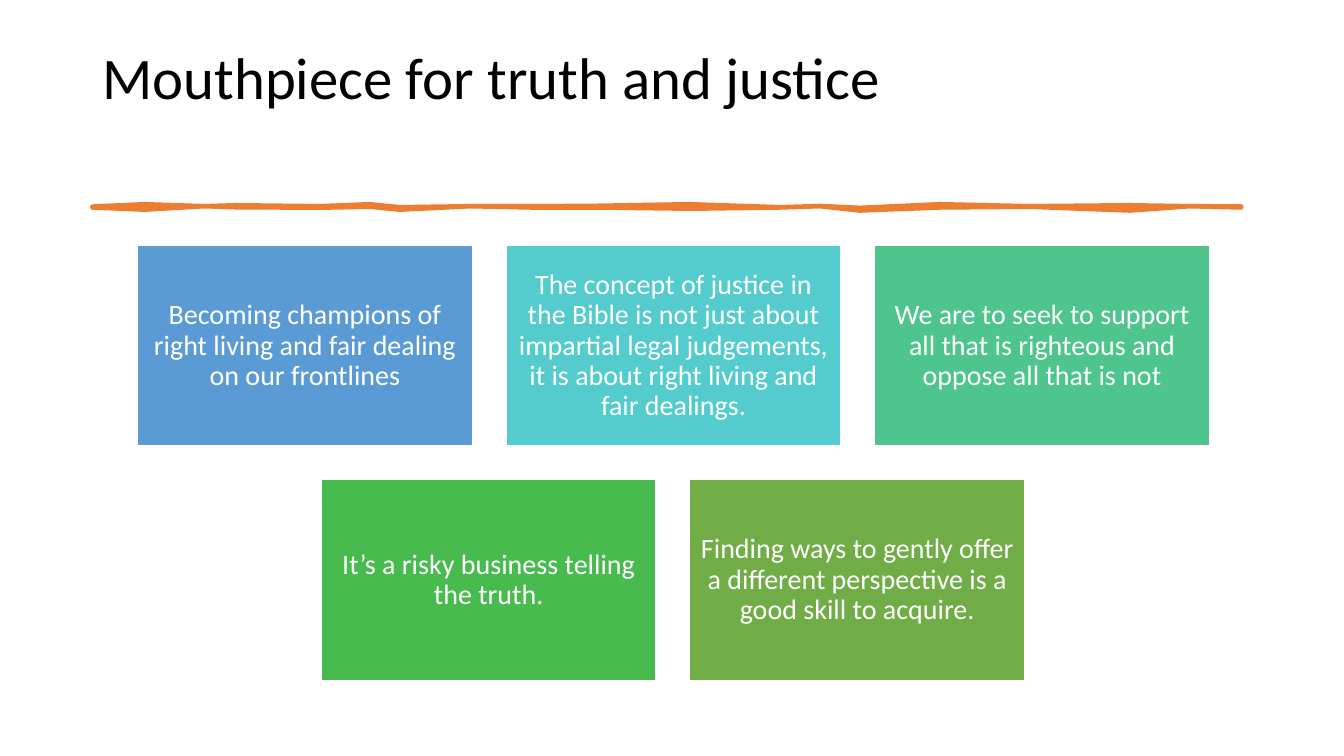
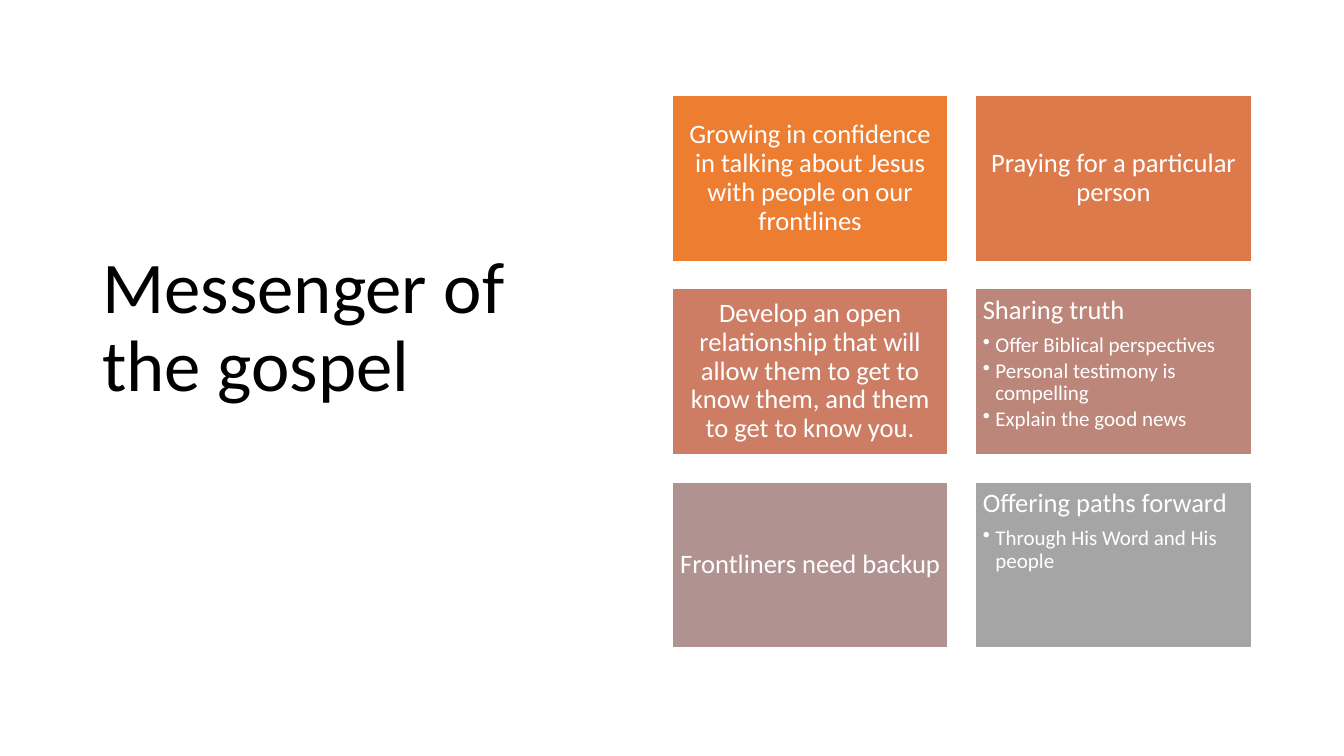
from dataclasses import dataclass
from typing import Any

from lxml import etree
from pptx import Presentation
from pptx import util as u
from pptx.dml import color
from pptx.enum import shapes, text
from pptx.oxml import ns

PX = 9525
FONT = "Calibri"
BLACK = "000000"
WHITE = "FFFFFF"
ORANGE = "ED7D31"
LINE_SPACING = 0.9
RULE_UNITS_PER_PX = 10
RULE_PROFILE = [
    (880, 1968, 1976), (1380, 1945, 1997), (1950, 1964, 1964), (2240, 1955, 1974),
    (3050, 1964, 1978), (3520, 1945, 1969), (3810, 1974, 1997), (4480, 1964, 1964),
    (5140, 1964, 1978), (5710, 1960, 1976), (6570, 1945, 1988), (7430, 1974, 1976),
    (7810, 1962, 1964), (8190, 1980, 2005), (8950, 1945, 1976), (9810, 1964, 1969),
    (10760, 1955, 2005), (11330, 1964, 1964), (11820, 1966, 1976),
]


@dataclass(frozen=True)
class Title:
    words: str
    left: int
    top: int
    width: int
    height: int
    points: int
    lift: int


@dataclass(frozen=True)
class Card:
    fill: str
    heading: str
    bullets: tuple[str, ...] = ()


@dataclass(frozen=True)
class Grid:
    left: int
    top: int
    width: int
    height: int
    gap: int
    columns: int
    inset: int
    points: int
    bullet_points: int = 15


TRUTH_TITLE = Title("Mouthpiece for truth and justice", 88, 38, 1104, 139, 42, 61)
TRUTH_GRID = Grid(131, 234, 319, 191, 32, 3, 8, 20)
TRUTH_CARDS = [
    Card("5B9BD5", "Becoming champions of right living and fair dealing on our frontlines"),
    Card("54CCCD", "The concept of justice in the Bible is not just about impartial legal "
                   "judgements, it is about right living and fair dealings."),
    Card("4DC58D", "We are to seek to support all that is righteous and oppose all that is not"),
    Card("48BB4F", "It’s a risky business telling the truth."),
    Card("70AD47", "Finding ways to gently offer a different perspective is a good skill "
                   "to acquire."),
]

GOSPEL_TITLE = Title("Messenger of the gospel", 88, 59, 511, 585, 52, 76)
GOSPEL_GRID = Grid(640, 91, 263, 158, 26, 2, 7, 19)
GOSPEL_CARDS = [
    Card(ORANGE, "Growing in confidence in talking about Jesus with people on our frontlines"),
    Card("DC7A4B", "Praying for a particular person"),
    Card("CC7D64", "Develop an open relationship that will allow them to get to know them, "
                   "and them to get to know you."),
    Card("BD867B", "Sharing truth", (
        "Offer Biblical perspectives",
        "Personal testimony is compelling",
        "Explain the good news",
    )),
    Card("B09391", "Frontliners need backup"),
    Card("A5A5A5", "Offering paths forward", ("Through His Word and His people",)),
]


def px(length: int) -> u.Emu:
    return u.Emu(length * PX)


def rgb(value: str) -> color.RGBColor:
    return color.RGBColor.from_string(value)


def assign(target: Any, values: dict[str, Any]) -> None:
    for name, value in values.items():
        setattr(target, name, value)


def paint(shape: Any, fill: str, line: str, points: float) -> None:
    shape.shadow.inherit = False
    shape.fill.solid()
    shape.fill.fore_color.rgb = rgb(fill)
    shape.line.color.rgb = rgb(line)
    shape.line.width = u.Pt(points)


def write(para: Any, words: str, points: int, ink: str, align: Any, after: float = 0) -> None:
    assign(para, {
        "alignment": align,
        "line_spacing": LINE_SPACING,
        "space_before": u.Pt(0),
        "space_after": u.Pt(after),
    })
    span = para.add_run()
    span.text = words
    assign(span.font, {"name": FONT, "size": u.Pt(points)})
    span.font.color.rgb = rgb(ink)


def add_bullet(para: Any) -> None:
    properties = para._p.get_or_add_pPr()
    properties.set("marL", str(px(12)))
    properties.set("indent", str(-px(12)))
    etree.SubElement(properties, ns.qn("a:buChar")).set("char", "•")


def add_page(deck: Any, title: Title) -> Any:
    page = deck.slides.add_slide(deck.slide_layouts[5])
    box = page.shapes.title
    assign(box, {name: px(getattr(title, name)) for name in ("left", "top", "width", "height")})
    assign(box.text_frame, {
        "word_wrap": True,
        "auto_size": text.MSO_AUTO_SIZE.NONE,
        "vertical_anchor": text.MSO_ANCHOR.MIDDLE,
        "margin_bottom": px(5 + title.lift),
    })
    write(box.text_frame.paragraphs[0], title.words, title.points, BLACK, text.PP_ALIGN.LEFT)
    return page


def add_rule(page: Any) -> None:
    upper = [(x, top) for x, top, _ in RULE_PROFILE]
    lower = [(x, bottom) for x, _, bottom in reversed(RULE_PROFILE)]
    builder = page.shapes.build_freeform(*upper[0], scale=PX / RULE_UNITS_PER_PX)
    builder.add_line_segments(upper[1:] + lower, close=True)
    paint(builder.convert_to_shape(), ORANGE, ORANGE, 3.25)


def add_card(page: Any, card: Card, grid: Grid, left: int, top: int) -> None:
    box = page.shapes.add_shape(
        shapes.MSO_SHAPE.RECTANGLE, px(left), px(top), px(grid.width), px(grid.height))
    paint(box, card.fill, WHITE, 1)
    frame = box.text_frame
    anchor = text.MSO_ANCHOR.TOP if card.bullets else text.MSO_ANCHOR.MIDDLE
    align = text.PP_ALIGN.LEFT if card.bullets else text.PP_ALIGN.CENTER
    assign(frame, {"word_wrap": True, "vertical_anchor": anchor})
    assign(frame, {f"margin_{side}": px(grid.inset) for side in ("left", "top", "right", "bottom")})
    heading_gap = 0.35 * grid.points if card.bullets else 0
    write(frame.paragraphs[0], card.heading, grid.points, WHITE, align, heading_gap)
    for words in card.bullets:
        para = frame.add_paragraph()
        write(para, words, grid.bullet_points, WHITE, align, 0.15 * grid.bullet_points)
        add_bullet(para)


def add_cards(page: Any, cards: list[Card], grid: Grid) -> None:
    step = grid.width + grid.gap
    for start in range(0, len(cards), grid.columns):
        row = cards[start:start + grid.columns]
        left = grid.left + (grid.columns - len(row)) * step // 2
        top = grid.top + start // grid.columns * (grid.height + grid.gap)
        for column, card in enumerate(row):
            add_card(page, card, grid, left + column * step, top)


def main() -> None:
    deck = Presentation()
    assign(deck, {"slide_width": px(1280), "slide_height": px(720)})
    truth = add_page(deck, TRUTH_TITLE)
    add_rule(truth)
    add_cards(truth, TRUTH_CARDS, TRUTH_GRID)
    gospel = add_page(deck, GOSPEL_TITLE)
    add_cards(gospel, GOSPEL_CARDS, GOSPEL_GRID)
    deck.save("out.pptx")


if __name__ == "__main__":
    main()
